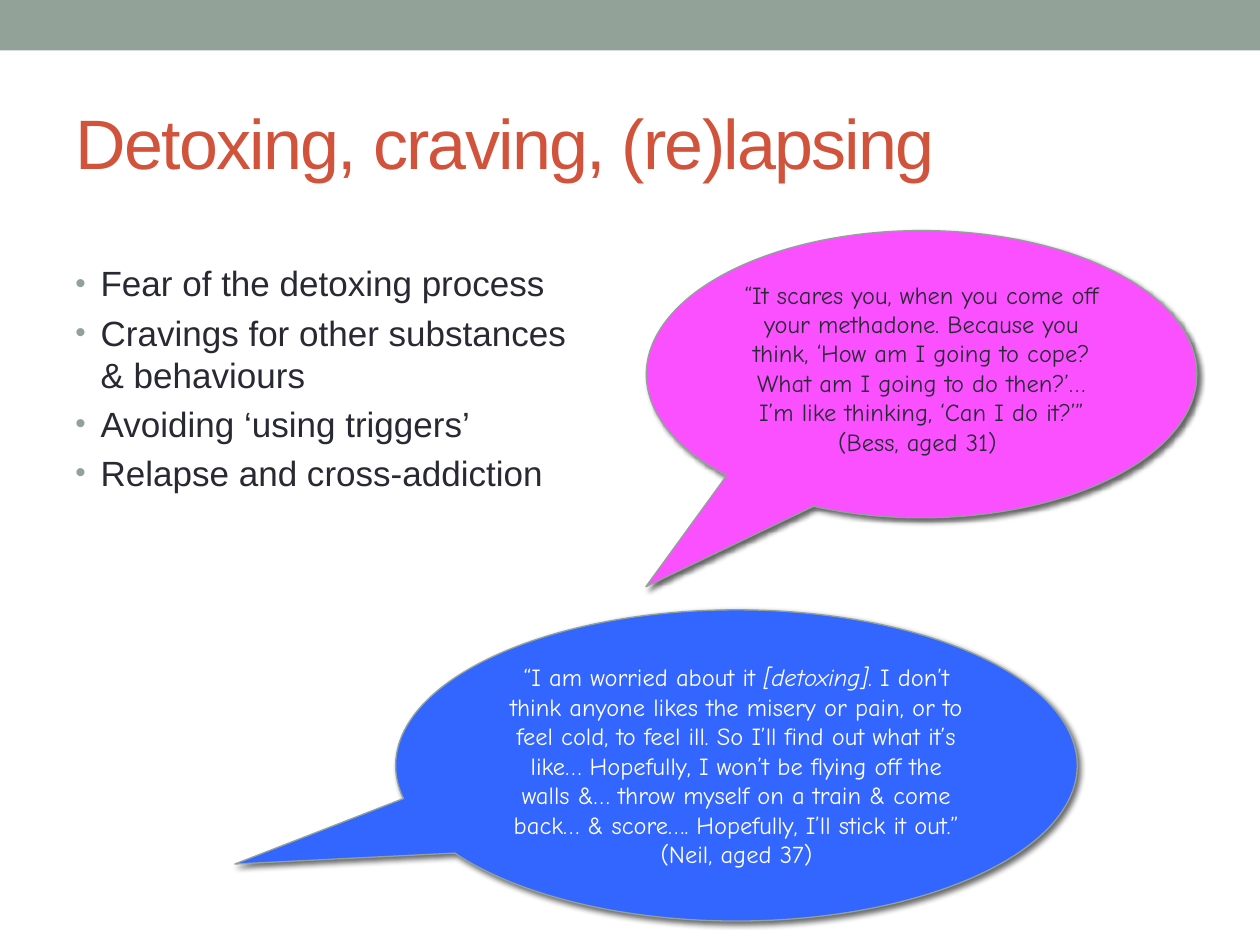
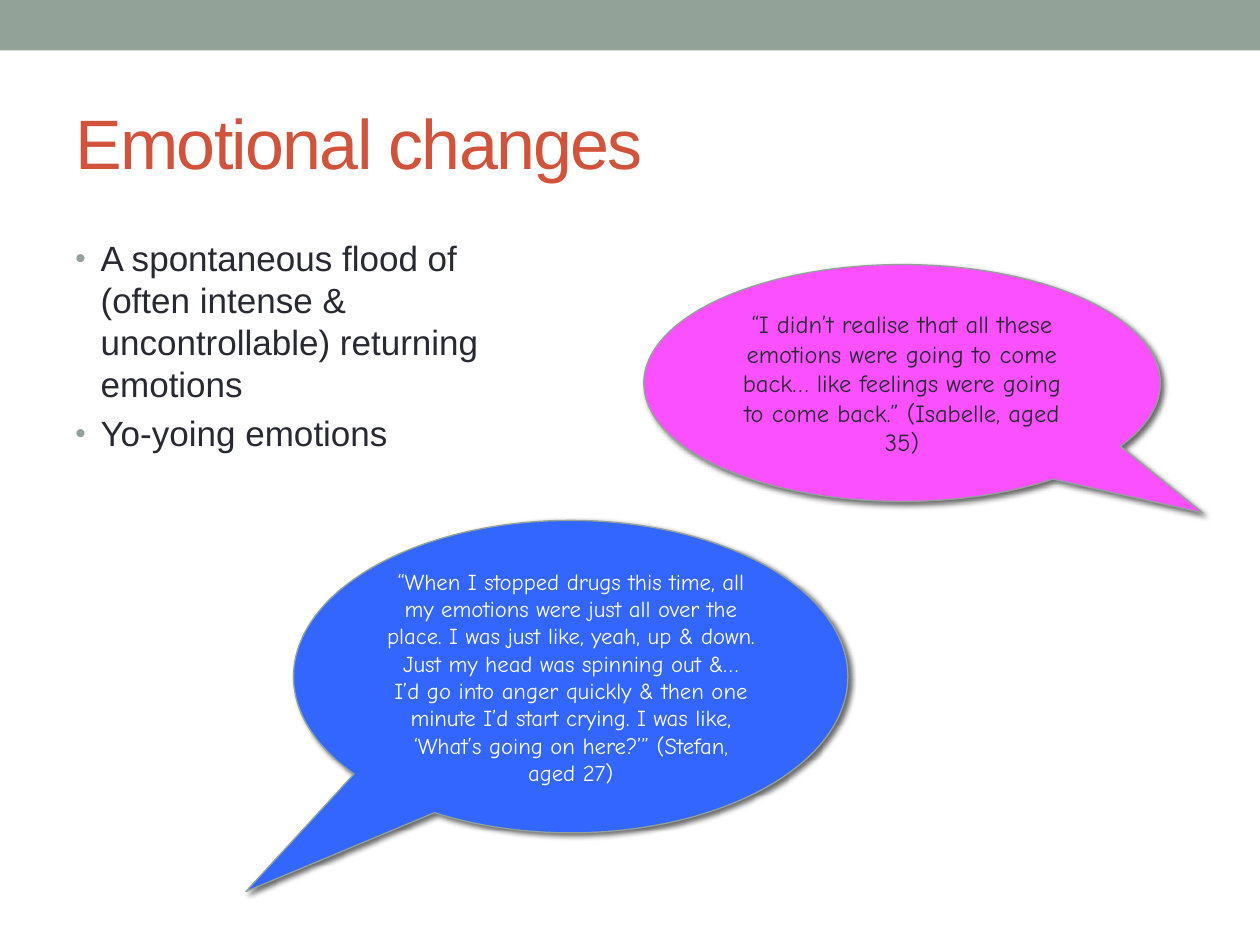
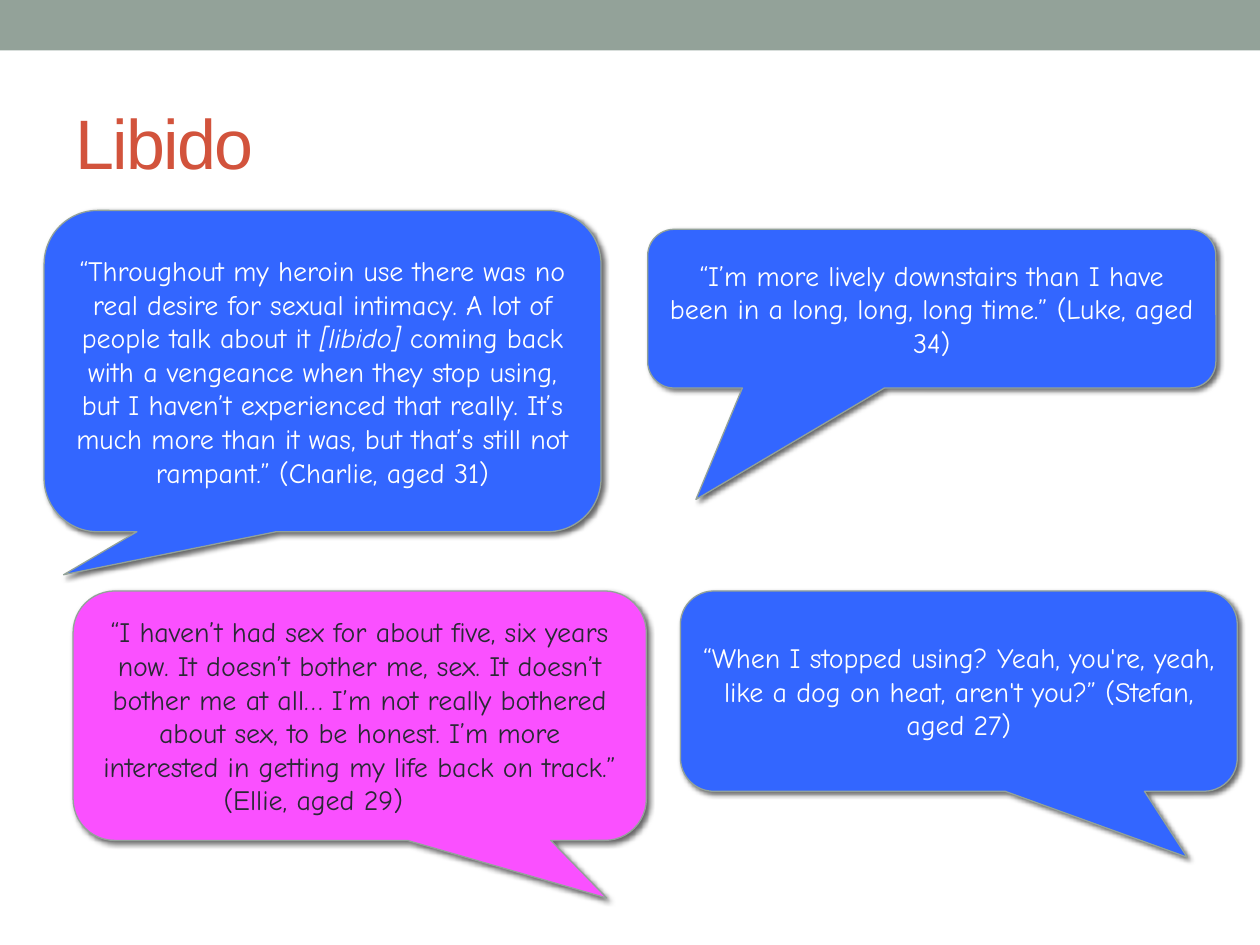
import pptx
import pptx.util
import pptx.oxml
import pptx.oxml.ns
from pptx.dml.color import RGBColor
from pptx.enum.shapes import MSO_SHAPE
from pptx.enum.text import MSO_ANCHOR, PP_ALIGN

SAGE = RGBColor(0x93, 0xA2, 0x99)
RUST = RGBColor(0xD2, 0x53, 0x3C)
INK = RGBColor(0x29, 0x29, 0x34)
WHITE = RGBColor(0xFF, 0xFF, 0xFF)
BLUE = RGBColor(0x33, 0x66, 0xFF)
PINK = RGBColor(0xFA, 0x50, 0xFF)
TEXT_ON = {BLUE: WHITE, PINK: INK}

TITLE_FONT = BODY_FONT = "Arial"
QUOTE_FONT = "Comic Neue"
WIDTH, HEIGHT = 10, 7.5
MARGIN = 0.5
BAND_HEIGHT = 0.4
HANGING = 0.2

OVAL = MSO_SHAPE.OVAL_CALLOUT
ROUNDED = MSO_SHAPE.ROUNDED_RECTANGULAR_CALLOUT

SLIDES = [
    {
        "title": "Detoxing, craving, (re)lapsing",
        "body_box": (MARGIN, 2.03, 4.32, 5.28),
        "points": [
            "Fear of the detoxing process",
            "Cravings for other substances & behaviours",
            "Avoiding ‘using triggers’",
            "Relapse and cross-addiction",
        ],
        "callout": OVAL,
        "quotes": [
            {"box": (3.14, 4.84, 5.41, 2.47), "tail": (-0.736, 0.317), "fill": BLUE, "size": 14,
             "words": ("“I am worried about it ", "[detoxing]",
                       ". I don’t think anyone likes the misery or pain, or to feel cold, "
                       "to feel ill. So I’ll find out what it’s like… Hopefully, I won’t be "
                       "flying off the walls &… throw myself on a train & come back… & score…. "
                       "Hopefully, I’ll stick it out.” (Neil, aged 37)")},
            {"box": (5.13, 1.83, 4.37, 2.28), "tail": (-0.501, 0.74), "fill": PINK, "size": 14,
             "lift": 0.05,
             "words": ("“It scares you, when you come off your methadone. Because you think, "
                       "‘How am I going to cope? What am I going to do then?’… I’m like "
                       "thinking, ‘Can I do it?’” (Bess, aged 31) ",)},
        ],
    },
    {
        "title": "Emotional changes",
        "body_box": (MARGIN, 1.83, 3.72, 5.16),
        "points": [
            "A spontaneous flood of (often intense & uncontrollable) returning emotions",
            "Yo-yoing emotions",
        ],
        "callout": OVAL,
        "quotes": [
            {"box": (5.11, 2.1, 4.1, 1.88), "tail": (0.582, 0.548), "fill": PINK, "size": 14,
             "words": ("“I didn’t realise that all these emotions were going to come back… "
                       "like feelings were going to come back.” (Isabelle, aged 35)",)},
            {"box": (2.33, 4.13, 4.4, 2.48), "tail": (-0.586, 0.688), "fill": BLUE, "size": 13,
             "words": ("“When I stopped drugs this time, all my emotions were just all over "
                       "the place. I was just like, yeah, up & down. Just my head was spinning "
                       "out &… I’d go into anger quickly & then one minute I’d start crying. "
                       "I was like, ‘What’s going on here?’” (Stefan, aged 27)",)},
        ],
    },
    {
        "title": "Libido",
        "points": [],
        "callout": ROUNDED,
        "quotes": [
            {"box": (5.14, 1.82, 4.51, 1.26), "tail": (-0.415, 1.202), "fill": BLUE, "size": 16,
             "words": ("“I’m more lively downstairs than I have been in a long, long, "
                       "long time.” (Luke, aged 34)",)},
            {"box": (0.58, 4.69, 4.55, 1.98), "tail": (0.431, 0.731), "fill": PINK, "size": 16,
             "words": ("“I haven’t had sex for about five, six years now. It doesn’t bother "
                       "me, sex. It doesn’t bother me at all… I’m not really bothered about "
                       "sex, to be honest. I’m more interested in getting my life back on "
                       "track.”",),
             "speaker": "(Ellie, aged 29)", "speaker_indent": 1.0},
            {"box": (0.35, 1.67, 4.42, 2.55), "tail": (-0.465, 0.634), "fill": BLUE, "size": 16,
             "words": ("“Throughout my heroin use there was no real desire for sexual "
                       "intimacy. A lot of people talk about it ", "[libido]",
                       " coming back with a vengeance when they stop using, but I haven’t "
                       "experienced that really. It’s much more than it was, but that’s still "
                       "not rampant.” (Charlie, aged 31)")},
            {"box": (5.4, 4.69, 4.42, 1.59), "tail": (0.41, 0.829), "fill": BLUE, "size": 16,
             "words": ("“When I stopped using? Yeah, you're, yeah, like a dog on heat, "
                       "aren't you?” (Stefan, aged 27)",)},
        ],
    },
]


def inches(lengths):
    return [pptx.util.Inches(length) for length in lengths]


def xml(body):
    return pptx.oxml.parse_xml(body.replace(">", " " + pptx.oxml.ns.nsdecls("a") + ">", 1))


def add_run(paragraph, words, font, size, color, italic=False):
    run = paragraph.add_run()
    run.text = words
    run.font.name = font
    run.font.size = pptx.util.Pt(size)
    run.font.color.rgb = color
    run.font.italic = italic
    return run


def add_band(slide, master):
    band = slide.shapes.add_shape(MSO_SHAPE.RECTANGLE, *inches((0, 0, WIDTH, BAND_HEIGHT)))
    band.shadow.inherit = False
    band.fill.solid()
    band.fill.fore_color.rgb = SAGE
    band.line.fill.background()
    master.shapes.element.insert(2, band.element)


def fill_title(slide, words):
    title = slide.shapes.title
    title.left, title.top, title.width, title.height = inches((MARGIN, 0.58, WIDTH - 2 * MARGIN, 1.08))
    title.text_frame.vertical_anchor = MSO_ANCHOR.MIDDLE
    paragraph = title.text_frame.paragraphs[0]
    paragraph.alignment = PP_ALIGN.LEFT
    run = add_run(paragraph, words, TITLE_FONT, 40, RUST)
    run.font._element.set("spc", "-100")


def add_points(slide, box, points):
    frame = slide.shapes.add_textbox(*inches(box)).text_frame
    frame.word_wrap = True
    for index, point in enumerate(points):
        paragraph = frame.add_paragraph() if index else frame.paragraphs[0]
        paragraph.space_before = pptx.util.Pt(4 if index else 0)
        properties = paragraph._p.get_or_add_pPr()
        properties.set("marL", str(pptx.util.Inches(HANGING)))
        properties.set("indent", str(-pptx.util.Inches(HANGING)))
        for bullet in (f'<a:buClr><a:srgbClr val="{SAGE}"/></a:buClr>',
                       '<a:buSzPct val="85000"></a:buSzPct>',
                       '<a:buFont typeface="Arial"></a:buFont>',
                       '<a:buChar char="•"></a:buChar>'):
            properties.append(xml(bullet))
        add_run(paragraph, point, BODY_FONT, 20, INK)


def add_quote(slide, callout, quote):
    bubble = slide.shapes.add_shape(callout, *inches(quote["box"]))
    bubble.adjustments[0], bubble.adjustments[1] = quote["tail"]
    bubble.fill.solid()
    bubble.fill.fore_color.rgb = quote["fill"]
    bubble.line.color.rgb = SAGE
    bubble.line.width = pptx.util.Pt(0.75)
    bubble.shadow.inherit = False
    effects = bubble.element.spPr.find(pptx.oxml.ns.qn("a:effectLst"))
    effects.append(xml(
        f'<a:outerShdw blurRad="{pptx.util.Pt(3)}" dist="{pptx.util.Pt(2)}" dir="2700000" '
        'algn="tl" rotWithShape="0"><a:srgbClr val="000000"><a:alpha val="60000"/>'
        '</a:srgbClr></a:outerShdw>'))

    frame = bubble.text_frame
    frame.word_wrap = True
    frame.vertical_anchor = MSO_ANCHOR.MIDDLE
    frame.margin_bottom = pptx.util.Inches(0.05 + 2 * quote.get("lift", 0))
    style = QUOTE_FONT, quote["size"], TEXT_ON[quote["fill"]]
    paragraph = frame.paragraphs[0]
    paragraph.alignment = PP_ALIGN.CENTER
    for index, words in enumerate(quote["words"]):
        add_run(paragraph, words, *style, italic=index % 2 == 1)
    if "speaker" in quote:
        speaker = frame.add_paragraph()
        speaker.alignment = PP_ALIGN.LEFT
        speaker._p.get_or_add_pPr().set("marL", str(pptx.util.Inches(quote["speaker_indent"])))
        add_run(speaker, quote["speaker"], *style)


def main():
    deck = pptx.Presentation()
    deck.slide_width, deck.slide_height = inches((WIDTH, HEIGHT))
    title_only = deck.slide_layouts.get_by_name("Title Only")
    for number, content in enumerate(SLIDES):
        slide = deck.slides.add_slide(title_only)
        if number == 0:
            add_band(slide, deck.slide_master)
        fill_title(slide, content["title"])
        if content["points"]:
            add_points(slide, content["body_box"], content["points"])
        for quote in content["quotes"]:
            add_quote(slide, content["callout"], quote)
    deck.save("out.pptx")


if __name__ == "__main__":
    main()
